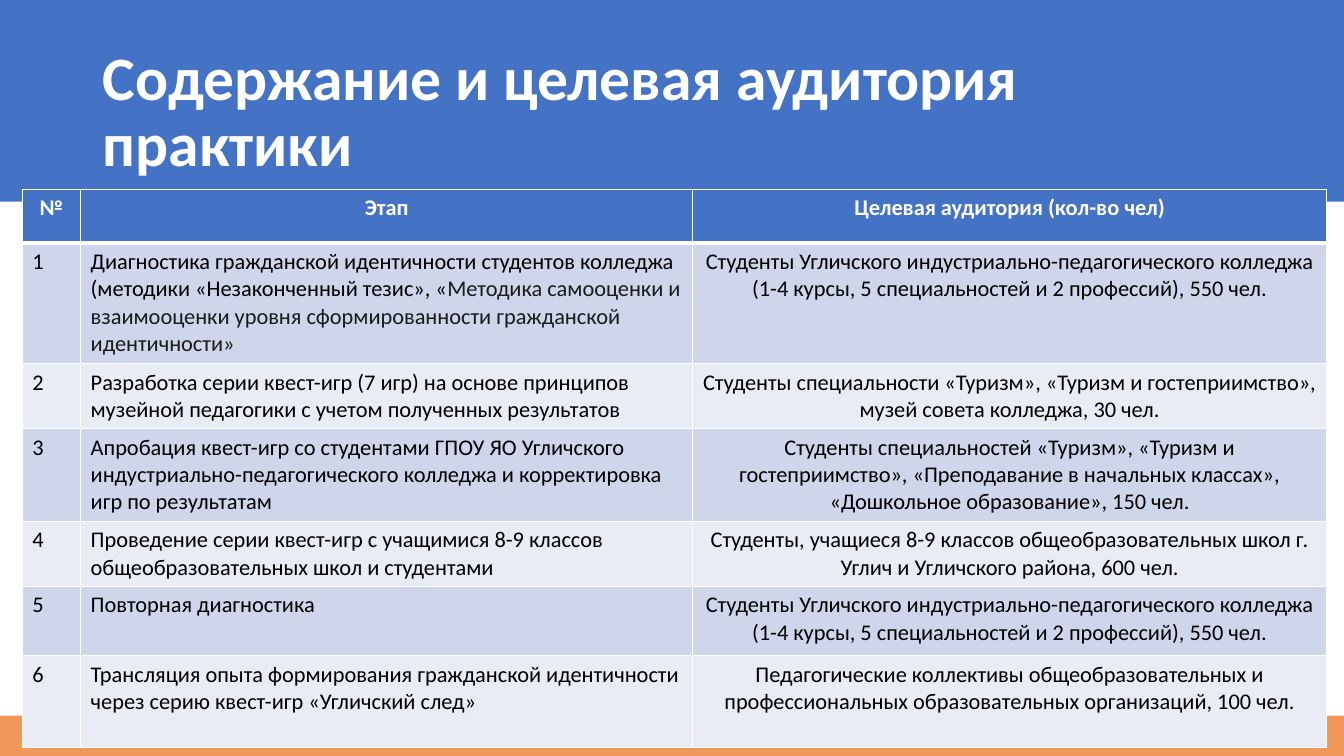
from lxml.etree import SubElement
from pptx import Presentation
from pptx.dml.color import RGBColor as Rgb
from pptx.enum.shapes import MSO_SHAPE as Shape
from pptx.enum.text import MSO_ANCHOR as Anchor, MSO_AUTO_SIZE as AutoSize, PP_ALIGN as Align
from pptx.oxml.ns import qn
from pptx.util import Inches, Pt

WIDTH, HEIGHT = 13.33, 7.5
FONT = "Calibri"
COLORS = {
    "header": "4472C4",
    "footer": "ED7D31",
    "odd": "CFD5EA",
    "even": "E9EBF5",
    "white": "FFFFFF",
    "text": "000000",
    "soft": "1A1A1A",
}
TITLE = "Содержание и целевая аудитория практики"
COLUMN_WIDTHS = [0.58, 6.07, 6.29]
ROW_HEIGHTS = [0.53, 1.2, 0.64, 0.92, 0.64, 0.69, 0.91]
COLLEGE = (
    "Студенты Угличского индустриально-педагогического колледжа "
    "(1-4 курсы, 5 специальностей и 2 профессий), 550 чел."
)
HEADINGS = ("№", "Этап", "Целевая аудитория (кол-во чел)")
STAGES = [
    (
        [
            ("Диагностика гражданской идентичности студентов колледжа "
             "(методики «Незаконченный тезис», «", "text"),
            ("Методика самооценки и взаимооценки уровня сформированности "
             "гражданской идентичности»", "soft"),
        ],
        COLLEGE,
    ),
    (
        "Разработка серии квест-игр (7 игр) на основе принципов музейной педагогики "
        "с учетом полученных результатов",
        "Студенты специальности «Туризм», «Туризм и гостеприимство», "
        "музей совета колледжа, 30 чел.",
    ),
    (
        "Апробация квест-игр со студентами ГПОУ ЯО Угличского "
        "индустриально-педагогического колледжа и корректировка игр по результатам",
        "Студенты специальностей «Туризм», «Туризм и гостеприимство», "
        "«Преподавание в начальных классах», «Дошкольное образование», 150 чел.",
    ),
    (
        "Проведение серии квест-игр с учащимися 8-9 классов общеобразовательных школ "
        "и студентами",
        "Студенты, учащиеся 8-9 классов общеобразовательных школ "
        "г. Углич и Угличского района, 600 чел.",
    ),
    ("Повторная диагностика", COLLEGE),
    (
        "Трансляция опыта формирования гражданской идентичности "
        "через серию квест-игр «Угличский след»",
        "Педагогические коллективы общеобразовательных и профессиональных "
        "образовательных организаций, 100 чел.",
    ),
]


def color(name):
    """Return the named palette colour."""
    return Rgb.from_string(COLORS[name])


def add_band(page, box, fill, opacity=100):
    """Draw a plain colour band in the given box."""
    band = page.shapes.add_shape(Shape.RECTANGLE, *map(Inches, box))
    band.shadow.inherit = False
    band.line.fill.background()
    band.fill.solid()
    band.fill.fore_color.rgb = color(fill)
    if opacity < 100:
        tint = band.element.spPr.find(f"{qn('a:solidFill')}/{qn('a:srgbClr')}")
        SubElement(tint, qn("a:alpha"), val=str(opacity * 1000))


def place_title(page, box):
    """Move the title placeholder to the box, above the bands, and format it."""
    title = page.shapes.title
    title.element.getparent().append(title.element)
    title.left, title.top, title.width, title.height = map(Inches, box)
    frame = title.text_frame
    frame.text = TITLE
    frame.word_wrap = True
    frame.auto_size = AutoSize.NONE
    frame.vertical_anchor = Anchor.MIDDLE
    para = frame.paragraphs[0]
    para.alignment = Align.LEFT
    para.line_spacing = 0.9
    style_font(para.font, 44, "white", True)


def style_font(font, size, name, bold):
    """Apply the slide typeface with a size, colour and weight."""
    font.name, font.size, font.bold = FONT, Pt(size), bold
    font.color.rgb = color(name)


def add_borders(cell, bottom):
    """Give a cell white borders, with the bottom one as wide as asked."""
    properties = cell._tc.get_or_add_tcPr()
    for side, width in (("L", 1), ("R", 1), ("T", 1), ("B", bottom)):
        line = SubElement(properties, qn(f"a:ln{side}"), w=str(Pt(width)))
        fill = SubElement(line, qn("a:solidFill"))
        SubElement(fill, qn("a:srgbClr"), val=COLORS["white"])


def fill_cell(cell, content, fill, centered, is_header, bottom):
    """Write one table cell from a string or a list of coloured runs."""
    add_borders(cell, bottom)
    cell.fill.solid()
    cell.fill.fore_color.rgb = color(fill)
    para = cell.text_frame.paragraphs[0]
    para.alignment = Align.CENTER if centered else Align.LEFT
    base = "white" if is_header else "text"
    spans = [(content, base)] if isinstance(content, str) else content
    style_font(para.font, 16, base, is_header)
    for text, name in spans:
        span = para.add_run()
        span.text = text
        style_font(span.font, 16, name, is_header)


def add_stage_table(page, left, top):
    """Place the table of stages and audiences at the given corner."""
    rows = [HEADINGS] + [(str(i), *stage) for i, stage in enumerate(STAGES, 1)]
    table = page.shapes.add_table(
        len(rows), len(HEADINGS), Inches(left), Inches(top),
        Inches(sum(COLUMN_WIDTHS)), Inches(sum(ROW_HEIGHTS)),
    ).table
    for column, width in zip(table.columns, COLUMN_WIDTHS):
        column.width = Inches(width)
    for i, (row, height) in enumerate(zip(rows, ROW_HEIGHTS)):
        table.rows[i].height = Inches(height)
        is_header = i == 0
        fill = "header" if is_header else ("even", "odd")[i % 2]
        for j, content in enumerate(row):
            fill_cell(table.cell(i, j), content, fill, is_header or j == 2,
                      is_header, 3 if is_header else 1)


def main():
    """Build and save the slide."""
    deck = Presentation()
    deck.slide_width, deck.slide_height = Inches(WIDTH), Inches(HEIGHT)
    page = deck.slides.add_slide(deck.slide_layouts[5])
    add_band(page, (0, 0, WIDTH, 2), "header")
    add_band(page, (0, HEIGHT - 0.4, WIDTH, 0.4), "footer", 80)
    place_title(page, (0.92, 0.4, 11.5, 1.45))
    add_stage_table(page, 0.22, 1.88)
    deck.save("out.pptx")


if __name__ == "__main__":
    main()
